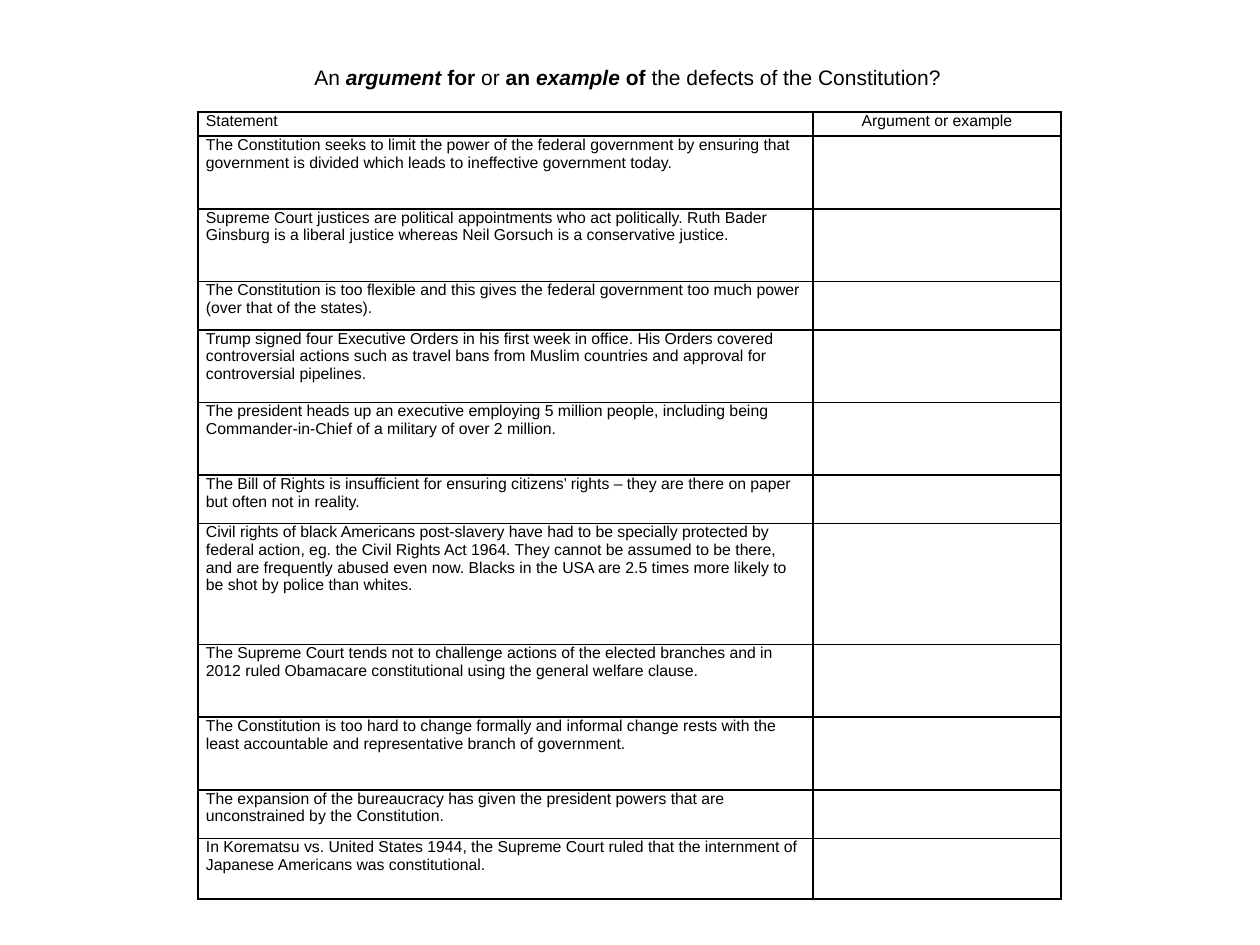
from dataclasses import dataclass

from lxml import etree
from pptx import Presentation
from pptx.dml.color import RGBColor
from pptx.enum.text import MSO_ANCHOR, PP_ALIGN
from pptx.oxml.ns import qn
from pptx.util import Emu, Pt

TOP = MSO_ANCHOR.TOP
LEFT, CENTER = PP_ALIGN.LEFT, PP_ALIGN.CENTER
PX = 914400 // 126


@dataclass(frozen=True)
class Theme:
    font: str = "Arial"
    ink: str = "000000"
    title: int = 12
    body: int = 9
    border: int = 1


THEME = Theme()

TITLE_BOX = (302, 58, 694, 55)
TITLE_RUNS = [
    ("An ", {}),
    ("argument", {"bold": True, "italic": True}),
    (" for ", {"bold": True}),
    ("or", {}),
    (" an ", {"bold": True}),
    ("example", {"bold": True, "italic": True}),
    (" of", {"bold": True}),
    (" the defects of the Constitution?", {}),
]

TABLE_BOX = (198, 112, 863, 787)
COLUMN_WIDTHS = (615, 248)
HEADINGS = ("Statement", "Argument or example")
HEADING_LINES = 1
# Each statement with its row height, counted in heading rows
STATEMENTS = [
    ("The Constitution seeks to limit the power of the federal government by ensuring that "
     "government is divided which leads to ineffective government today.", 3),
    ("Supreme Court justices are political appointments who act politically. Ruth Bader "
     "Ginsburg is a liberal justice whereas Neil Gorsuch is a conservative justice.", 3),
    ("The Constitution is too flexible and this gives the federal government too much power "
     "(over that of the states).", 2),
    ("Trump signed four Executive Orders in his first week in office. His Orders covered "
     "controversial actions such as travel bans from Muslim countries and approval for "
     "controversial pipelines.", 3),
    ("The president heads up an executive employing 5 million people, including being "
     "Commander-in-Chief of a military of over 2 million.", 3),
    ("The Bill of Rights is insufficient for ensuring citizens’ rights – they are there on "
     "paper but often not in reality.", 2),
    ("Civil rights of black Americans post-slavery have had to be specially protected by "
     "federal action, eg. the Civil Rights Act 1964. They cannot be assumed to be there, "
     "and are frequently abused even now. Blacks in the USA are 2.5 times more likely to "
     "be shot by police than whites.", 5),
    ("The Supreme Court tends not to challenge actions of the elected branches and in "
     "2012 ruled Obamacare constitutional using the general welfare clause.", 3),
    ("The Constitution is too hard to change formally and informal change rests with the "
     "least accountable and representative branch of government.", 3),
    ("The expansion of the bureaucracy has given the president powers that are "
     "unconstrained by the Constitution.", 2),
    ("In Korematsu vs. United States 1944, the Supreme Court ruled that the internment of "
     "Japanese Americans was constitutional.", 2.5),
]


def px(n):
    return Emu(round(n * PX))


def add_run(p, text, size, **formats):
    r = p.add_run()
    r.text = text
    r.font.color.rgb = RGBColor.from_string(THEME.ink)
    for name, value in {"name": THEME.font, "size": Pt(size), **formats}.items():
        setattr(r.font, name, value)


def add_title(s):
    tf = s.shapes.add_textbox(*map(px, TITLE_BOX)).text_frame
    tf.word_wrap = True
    tf.vertical_anchor = TOP
    for text, formats in TITLE_RUNS:
        add_run(tf.paragraphs[0], text, THEME.title, **formats)


def set_borders(cell):
    """Draw all four sides; lines must precede the fill in the cell properties."""
    tcPr = cell._tc.get_or_add_tcPr()
    for i, side in enumerate(("a:lnL", "a:lnR", "a:lnT", "a:lnB")):
        ln = etree.Element(qn(side), w=str(Pt(THEME.border)))
        fill = etree.SubElement(ln, qn("a:solidFill"))
        etree.SubElement(fill, qn("a:srgbClr"), val=THEME.ink)
        tcPr.insert(i, ln)


def fill_cell(cell, text, align):
    margins = {"margin_left": px(8), "margin_right": px(8),
               "margin_top": 0, "margin_bottom": 0}
    for name, value in margins.items():
        setattr(cell, name, value)
    cell.fill.background()
    set_borders(cell)
    p = cell.text_frame.paragraphs[0]
    p.alignment = align
    if text:
        add_run(p, text, THEME.body)


def add_statement_table(s):
    rows = [HEADINGS] + [(text, "") for text, _ in STATEMENTS]
    lines = [HEADING_LINES] + [n for _, n in STATEMENTS]
    table = s.shapes.add_table(len(rows), len(HEADINGS), *map(px, TABLE_BOX)).table
    table.first_row = table.horz_banding = False
    for column, width in zip(table.columns, COLUMN_WIDTHS):
        column.width = px(width)
    for i, texts in enumerate(rows):
        table.rows[i].height = px(TABLE_BOX[3] * lines[i] / sum(lines))
        for j, (text, align) in enumerate(zip(texts, (LEFT, CENTER))):
            fill_cell(table.cell(i, j), text, align)


def main():
    prs = Presentation()
    prs.slide_width, prs.slide_height = px(1260), px(945)
    s = prs.slides.add_slide(prs.slide_layouts[6])
    add_statement_table(s)
    add_title(s)
    prs.save("out.pptx")


if __name__ == "__main__":
    main()
